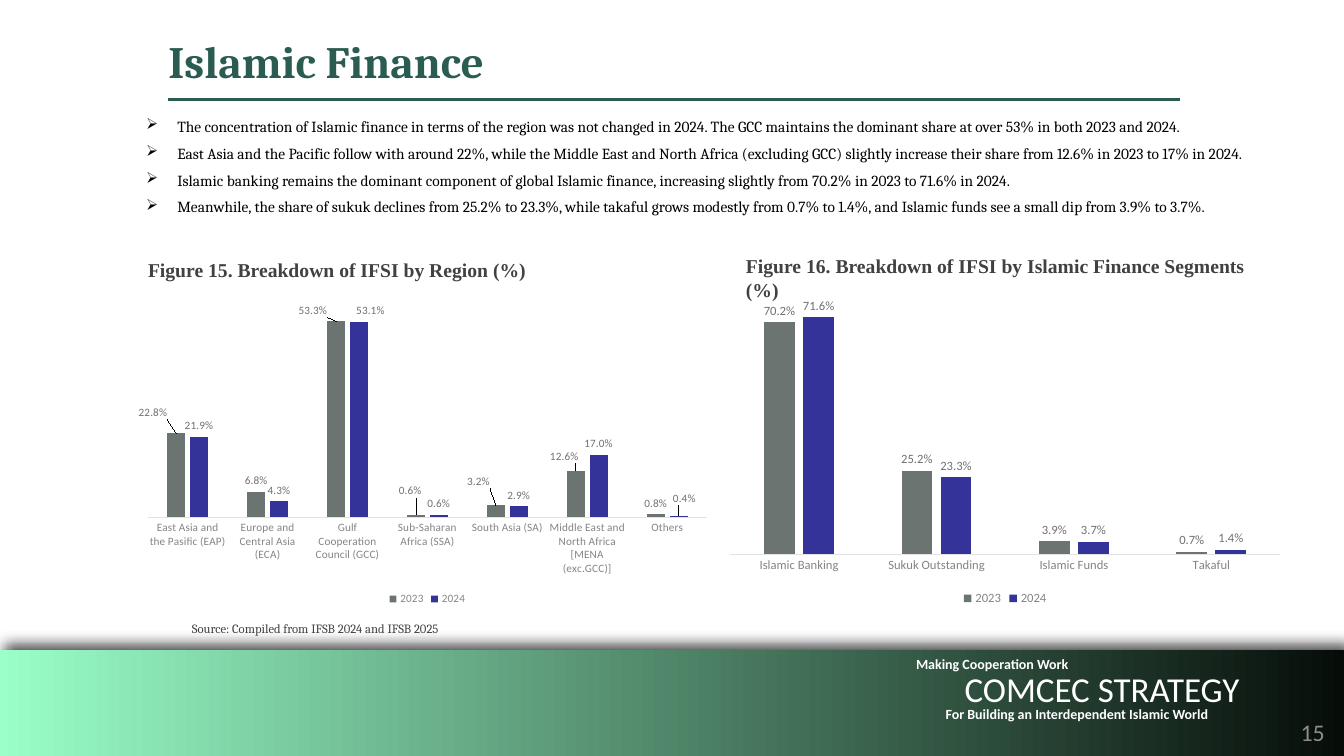
from dataclasses import dataclass, field
from typing import Any

from lxml.etree import SubElement
from pptx import Presentation
from pptx.chart.data import CategoryChartData
from pptx.dml.color import RGBColor
from pptx.enum.chart import XL_CHART_TYPE, XL_LABEL_POSITION, XL_LEGEND_POSITION, XL_TICK_MARK
from pptx.enum.shapes import MSO_CONNECTOR, MSO_SHAPE
from pptx.enum.text import MSO_ANCHOR, MSO_AUTO_SIZE, PP_ALIGN
from pptx.oxml import parse_xml
from pptx.oxml.ns import nsdecls, qn
from pptx.util import Inches, Pt

GREEN = "2A5C51"
DARK = "414141"
WHITE = "FFFFFF"
AXIS_GREY = "848484"
LABEL_GREY = "707070"
SERIES_COLOURS = ("6C7472", "333399")
NO_INSET = (0, 0, 0, 0)
DEFAULT_INSET = (0.1, 0.05, 0.1, 0.05)


@dataclass
class Caption:
    text: str
    area: tuple[float, float, float, float]
    size: float
    face: str
    colour: str
    bold: bool = False
    align: Any = PP_ALIGN.LEFT
    inset: tuple[float, float, float, float] = DEFAULT_INSET
    anchor: Any = MSO_ANCHOR.TOP
    wrap: bool = True


@dataclass
class ColumnChart:
    area: tuple[float, float, float, float]
    plot_area: tuple[float, float, float, float]
    categories: list[str]
    series: dict[str, list[float]]
    size: float
    maximum: float
    label_shifts: dict[tuple[int, int], tuple[float, float]] = field(default_factory=dict)


TITLE = Caption("Islamic Finance", (1.67, 0.33, 9.49, 0.54), 32, "Cambria", GREEN, True, inset=NO_INSET)
CAPTIONS = [
    Caption("15", (11.17, 7.08, 2.04, 0.42), 17, "Calibri", "8D8D8D",
            align=PP_ALIGN.RIGHT, inset=(0.07, 0.04, 0.07, 0.04)),
    Caption("For Building an Interdependent Islamic World", (4.38, 7, 12.6, 0.4), 10, "Calibri", WHITE, True,
            PP_ALIGN.CENTER, NO_INSET),
    Caption("COMCEC STRATEGY", (4.73, 6.56, 12.4, 0.48), 25, "Calibri", WHITE, False,
            PP_ALIGN.CENTER, NO_INSET, MSO_ANCHOR.BOTTOM),
    Caption("Making Cooperation Work", (5.83, 6.5, 8.02, 0.36), 10, "Calibri", WHITE, True,
            PP_ALIGN.CENTER, NO_INSET),
    Caption("Source: Compiled from IFSB 2024 and IFSB 2025", (1.69, 6.11, 2.87, 0.25), 9, "Cambria", DARK,
            align=PP_ALIGN.CENTER, wrap=False),
    Caption("Figure 15. Breakdown of IFSI by Region (%)", (1.37, 2.51, 5.04, 0.34), 14,
            "Times New Roman", DARK, True),
    Caption("Figure 16. Breakdown of IFSI by Islamic Finance Segments (%)", (7.3, 2.47, 5.51, 0.34), 14,
            "Times New Roman", DARK, True),
]
FINDINGS = [
    "The concentration of Islamic finance in terms of the region was not changed in 2024. "
    "The GCC maintains the dominant share at over 53% in both 2023 and 2024.",
    "East Asia and the Pacific follow with around 22%, while the Middle East and North Africa "
    "(excluding GCC) slightly increase their share from 12.6% in 2023 to 17% in 2024.",
    "Islamic banking remains the dominant component of global Islamic finance, "
    "increasing slightly from 70.2% in 2023 to 71.6% in 2024.",
    "Meanwhile, the share of sukuk declines from 25.2% to 23.3%, while takaful grows modestly "
    "from 0.7% to 1.4%, and Islamic funds see a small dip from 3.9% to 3.7%.",
]
CHARTS = [
    ColumnChart(
        (1.35, 2.88, 5.78, 3.17), (0.02, 0.02, 0.96, 0.69),
        ["East Asia and the Pasific (EAP)", "Europe and Central Asia (ECA)", "Gulf Cooperation Council (GCC)",
         "Sub-Saharan Africa (SSA)", "South Asia (SA)", "Middle East and North Africa [MENA (exc.GCC)]", "Others"],
        {"2023": [0.228, 0.068, 0.533, 0.006, 0.032, 0.126, 0.008],
         "2024": [0.219, 0.043, 0.531, 0.006, 0.029, 0.17, 0.004]},
        8, 0.6,
        {(0, 0): (-0.04, -0.03), (0, 2): (-0.04, 0), (0, 3): (-0.01, -0.04), (0, 4): (-0.03, -0.04),
         (0, 5): (-0.02, -0.01), (1, 2): (0.02, 0), (1, 6): (0.01, -0.02)}),
    ColumnChart(
        (7.13, 2.81, 5.68, 3.24), (0.02, 0.02, 0.96, 0.81),
        ["Islamic Banking", "Sukuk Outstanding", "Islamic Funds", "Takaful"],
        {"2023": [0.702, 0.252, 0.039, 0.007], "2024": [0.716, 0.233, 0.037, 0.014]},
        9, 0.8),
]


def paint(colour_format: Any, colour: str) -> None:
    colour_format.rgb = RGBColor.from_string(colour)


def apply(target: Any, values: dict[str, Any]) -> None:
    for name, value in values.items():
        setattr(target, name, value)


def set_font(font: Any, size: float, face: str, colour: str, bold: bool = False) -> None:
    apply(font, {"size": Pt(size), "name": face, "bold": bold})
    paint(font.color, colour)


def fill_caption(box: Any, caption: Caption) -> None:
    left, top, width, height = map(Inches, caption.area)
    apply(box, {"left": left, "top": top, "width": width, "height": height})
    margins = dict(zip(("margin_left", "margin_top", "margin_right", "margin_bottom"), map(Inches, caption.inset)))
    apply(box.text_frame, {"word_wrap": caption.wrap, "auto_size": MSO_AUTO_SIZE.NONE,
                           "vertical_anchor": caption.anchor, **margins})
    para = box.text_frame.paragraphs[0]
    para.alignment = caption.align
    span = para.add_run()
    span.text = caption.text
    set_font(span.font, caption.size, caption.face, caption.colour, caption.bold)


def add_footer_band(page: Any) -> None:
    band = page.shapes.add_shape(MSO_SHAPE.RECTANGLE, Inches(-0.03), Inches(6.45), Inches(13.37), Inches(1.05))
    band.line.fill.background()
    band.fill.gradient()
    band.fill.gradient_angle = 0
    for stop, colour, position in zip(band.fill.gradient_stops, ("9AFFC9", "060D09"), (0, 1)):
        paint(stop.color, colour)
        stop.position = position
    band.shadow.inherit = False
    effects = band._element.spPr.find(qn("a:effectLst"))
    shadow = SubElement(effects, qn("a:outerShdw"), blurRad=str(Pt(10)), dist=str(Pt(6)),
                        dir=str(318 * 60000), rotWithShape="0")
    black = SubElement(shadow, qn("a:srgbClr"), val="000000")
    SubElement(black, qn("a:alpha"), val="75000")


def add_title_rule(page: Any) -> None:
    rule = page.shapes.add_connector(MSO_CONNECTOR.STRAIGHT, Inches(1.67), Inches(0.99), Inches(11.7), Inches(0.99))
    rule.line.width = Pt(2)
    paint(rule.line.color, GREEN)
    SubElement(rule._element.spPr, qn("a:effectLst"))


def add_findings(page: Any) -> None:
    box = page.shapes.add_textbox(Inches(1.35), Inches(1.11), Inches(11.62), Inches(1.28))
    frame = box.text_frame
    frame.word_wrap = True
    for index, finding in enumerate(FINDINGS):
        para = frame.add_paragraph() if index else frame.paragraphs[0]
        properties = para._p.get_or_add_pPr()
        apply(para, {"alignment": PP_ALIGN.JUSTIFY, "space_after": Pt(6)})
        properties.set("marL", str(Inches(0.31)))
        properties.set("indent", str(Inches(-0.31)))
        SubElement(properties, qn("a:buChar"), char="➢")
        span = para.add_run()
        span.text = finding
        set_font(span.font, 11, "Cambria", "000000")


def layout_xml(values: dict[str, Any]) -> Any:
    settings = "".join(f'<c:{name} val="{value}"/>' for name, value in values.items())
    return parse_xml(f'<c:layout {nsdecls("c")}><c:manualLayout>{settings}</c:manualLayout></c:layout>')


def add_column_chart(page: Any, figure: ColumnChart) -> None:
    data = CategoryChartData(number_format="0.00%")
    data.categories = figure.categories
    for name, values in figure.series.items():
        data.add_series(name, values)
    chart = page.shapes.add_chart(XL_CHART_TYPE.COLUMN_CLUSTERED, *map(Inches, figure.area), data).chart
    apply(chart, {"has_title": False, "has_legend": True})
    set_font(chart.font, figure.size, "Calibri", DARK)
    apply(chart.legend, {"position": XL_LEGEND_POSITION.BOTTOM, "include_in_layout": False})
    set_font(chart.legend.font, figure.size, "Calibri", AXIS_GREY)
    apply(chart.value_axis, {"visible": False, "has_major_gridlines": False,
                             "minimum_scale": 0, "maximum_scale": figure.maximum})
    axis = chart.category_axis
    axis.major_tick_mark = XL_TICK_MARK.NONE
    axis.format.line.width = Pt(0.75)
    paint(axis.format.line.color, "E2E2E2")
    set_font(axis.tick_labels.font, figure.size, "Calibri", AXIS_GREY)
    plot = chart.plots[0]
    apply(plot, {"gap_width": 219, "overlap": -27, "vary_by_categories": False})
    for series, colour in zip(plot.series, SERIES_COLOURS):
        series.format.fill.solid()
        paint(series.format.fill.fore_color, colour)
        labels = series.data_labels
        apply(labels, {"show_value": True, "number_format": "0.0%", "number_format_is_linked": False,
                       "position": XL_LABEL_POSITION.OUTSIDE_END})
        set_font(labels.font, figure.size, "Calibri", LABEL_GREY)
    for (row, point), (across, down) in figure.label_shifts.items():
        series = plot.series[row]
        label = series.points[point].data_label
        label.position = XL_LABEL_POSITION.OUTSIDE_END
        set_font(label.font, figure.size, "Calibri", LABEL_GREY)
        index = series._element.xpath(f'c:dLbls/c:dLbl/c:idx[@val="{point}"]')[0]
        index.addnext(parse_xml(f'<c:numFmt {nsdecls("c")} formatCode="0.0%" sourceLinked="0"/>'))
        index.addnext(layout_xml({"x": across, "y": down}))
    area = chart._chartSpace.xpath("c:chart/c:plotArea")[0]
    for present in area.findall(qn("c:layout")):
        area.remove(present)
    area.insert(0, layout_xml({"layoutTarget": "inner", "xMode": "edge", "yMode": "edge",
                               **dict(zip("xywh", figure.plot_area))}))


def main() -> None:
    deck = Presentation()
    apply(deck, {"slide_width": Inches(13.33), "slide_height": Inches(7.5)})
    page = deck.slides.add_slide(deck.slide_layouts[5])
    add_footer_band(page)
    add_title_rule(page)
    fill_caption(page.shapes.title, TITLE)
    for caption in CAPTIONS:
        fill_caption(page.shapes.add_textbox(0, 0, 0, 0), caption)
    add_findings(page)
    for figure in CHARTS:
        add_column_chart(page, figure)
    deck.save("out.pptx")


if __name__ == "__main__":
    main()
